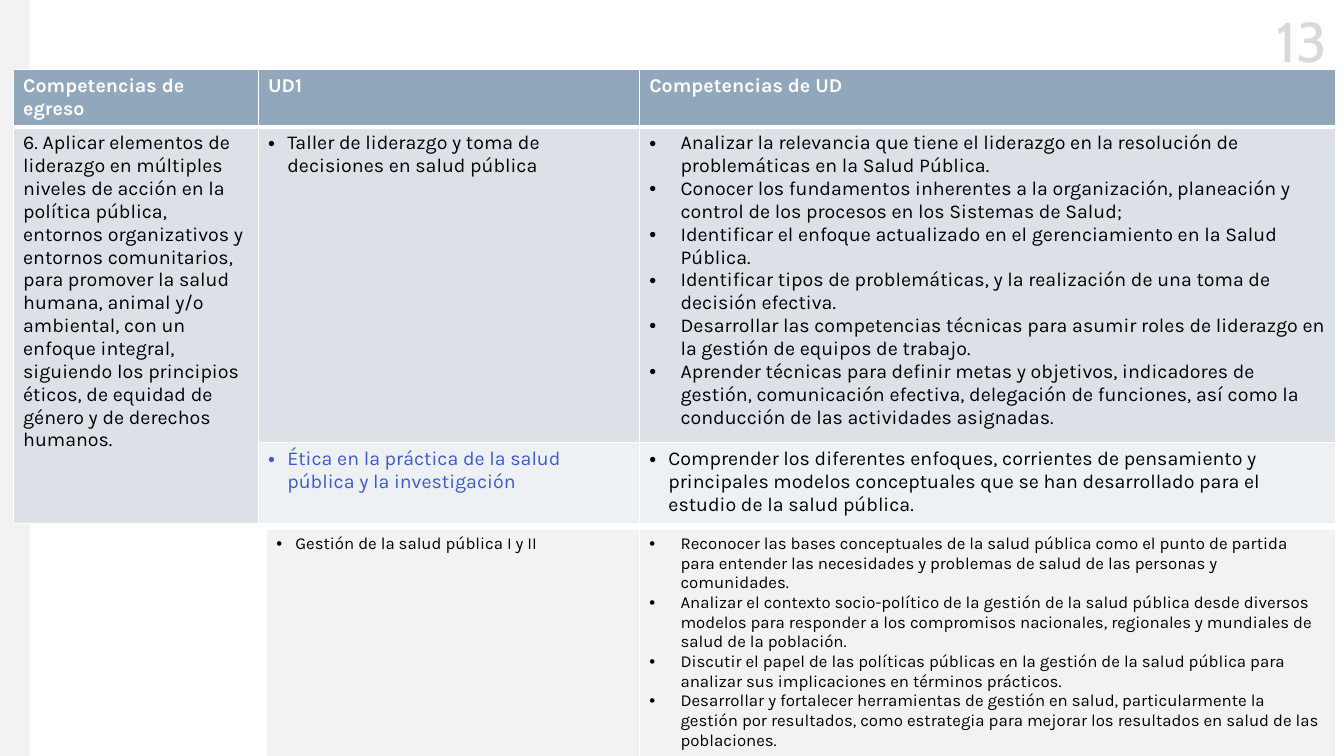
from dataclasses import dataclass

from lxml.etree import SubElement
from pptx import Presentation
from pptx.dml.color import RGBColor as RGB
from pptx.enum.shapes import MSO_SHAPE as SHAPE
from pptx.enum.text import MSO_AUTO_SIZE as AUTO, PP_ALIGN as ALIGN
from pptx.oxml import parse_xml
from pptx.oxml.ns import nsdecls, qn
from pptx.util import Inches, Pt


@dataclass(frozen=True)
class Theme:
    body_font: str = "Karla"
    number_font: str = "Cabin"
    white: str = "FFFFFF"
    black: str = "000000"
    blue: str = "3C5ACF"
    header: str = "91A7BC"
    band_dark: str = "DCE1E7"
    band_light: str = "EEF1F3"
    pale: str = "F2F2F2"
    number: str = "D9D9D9"
    body: int = 14
    small: int = 12
    number_size: int = 40


@dataclass(frozen=True)
class CellText:
    lines: tuple[str, ...]
    fill: str
    color: str = "000000"
    size: int = 14
    bold: bool = False
    indent: float = 0  # inches; zero means no bullet
    bottom: int = 1    # width of the lower border in points


T = Theme()
NARROW, WIDE = 0.19, 0.31
ROW = 0.41
EGRESO, UNIT, SKILLS = 2.43, 3.78, 6.91
LEFT, TOP, HEIGHT = 0.13, 0.69, 4.57
MANAGEMENT_SHIFT = 0.08  # the lower table starts slightly inside the unit column

HEADER = [CellText((name,), T.header, T.white, T.body, True, bottom=3)
          for name in ("Competencias de egreso", "UD1", "Competencias de UD")]

LEADERSHIP = [
    CellText((
        "6. Aplicar elementos de liderazgo en múltiples niveles de acción en la "
        "política pública, entornos organizativos y entornos comunitarios, para "
        "promover la salud humana, animal y/o ambiental, con un enfoque integral, "
        "siguiendo los principios éticos, de equidad de género y de derechos humanos.",
    ), T.band_dark),
    CellText(("Taller de liderazgo y toma de decisiones en salud pública",),
             T.band_dark, indent=NARROW),
    CellText((
        "Analizar la relevancia que tiene el liderazgo en la resolución de "
        "problemáticas en la Salud Pública.",
        "Conocer los fundamentos inherentes a la organización, planeación y control "
        "de los procesos en los Sistemas de Salud;",
        "Identificar el enfoque actualizado en el gerenciamiento en la Salud Pública.",
        "Identificar tipos de problemáticas, y la realización de una toma de "
        "decisión efectiva.",
        "Desarrollar las competencias técnicas para asumir roles de liderazgo en la "
        "gestión de equipos de trabajo.",
        "Aprender técnicas para definir metas y objetivos, indicadores de gestión, "
        "comunicación efectiva, delegación de funciones, así como la conducción de "
        "las actividades asignadas.",
    ), T.band_dark, indent=WIDE),
]

ETHICS = [
    CellText((), T.band_dark),
    CellText(("Ética en la práctica de la salud pública y la investigación",),
             T.band_light, T.blue, indent=NARROW),
    CellText((
        "Comprender los diferentes enfoques, corrientes de pensamiento y principales "
        "modelos conceptuales que se han desarrollado para el estudio de la salud "
        "pública.",
    ), T.band_light, indent=NARROW),
]

MANAGEMENT = [
    CellText(("Gestión de la salud pública I y II",), T.pale, size=T.small,
             indent=NARROW, bottom=3),
    CellText((
        "Reconocer las bases conceptuales de la salud pública como el punto de "
        "partida para entender las necesidades y problemas de salud de las personas "
        "y comunidades.",
        "Analizar el contexto socio-político de la gestión de la salud pública desde "
        "diversos modelos para responder a los compromisos nacionales, regionales y "
        "mundiales de salud de la población.",
        "Discutir el papel de las políticas públicas en la gestión de la salud "
        "pública para analizar sus implicaciones en términos prácticos.",
        "Desarrollar y fortalecer herramientas de gestión en salud, particularmente "
        "la gestión por resultados, como estrategia para mejorar los resultados en "
        "salud de las poblaciones.",
    ), T.pale, size=T.small, indent=WIDE, bottom=3),
]


def add_run(p, text: str, font: str, size: int, color: str, bold: bool = False) -> None:
    r = p.add_run()
    r.text = text
    r.font.name, r.font.size, r.font.bold = font, Pt(size), bold
    r.font.color.rgb = RGB.from_string(color)


def add_bullet(p, indent: float) -> None:
    pPr = p._p.get_or_add_pPr()
    pPr.set("marL", str(Inches(indent)))
    pPr.set("indent", str(-Inches(indent)))
    SubElement(pPr, qn("a:buFont")).set("typeface", "Arial")
    SubElement(pPr, qn("a:buChar")).set("char", "•")


def set_borders(cell, bottom: int) -> None:
    tcPr = cell._tc.get_or_add_tcPr()
    for i, (side, width) in enumerate(zip("LRTB", (1, 1, 1, bottom))):
        tcPr.insert(i, parse_xml(
            f'<a:ln{side} {nsdecls("a")} w="{Pt(width)}"><a:solidFill>'
            f'<a:srgbClr val="{T.white}"/></a:solidFill></a:ln{side}>'))


def fill_cell(cell, content: CellText) -> None:
    cell.fill.solid()
    cell.fill.fore_color.rgb = RGB.from_string(content.fill)
    set_borders(cell, content.bottom)
    tf = cell.text_frame
    for i, line in enumerate(content.lines):
        p = tf.add_paragraph() if i else tf.paragraphs[0]
        if content.indent:
            add_bullet(p, content.indent)
        add_run(p, line, T.body_font, content.size, content.color, content.bold)


def add_grid(s, left: float, top: float, height: float,
             widths: list[float], rows: list[list[CellText]]):
    frame = s.shapes.add_table(len(rows), len(widths), Inches(left), Inches(top),
                               Inches(sum(widths)), Inches(ROW * len(rows)))
    table = frame.table
    table.horz_banding = False
    table.first_row = len(rows) > 1
    for column, width in zip(table.columns, widths):
        column.width = Inches(width)
    for y, row in enumerate(rows):
        for x, content in enumerate(row):
            fill_cell(table.cell(y, x), content)
    frame.height = Inches(height)  # rows grow with their text
    return table


def main() -> None:
    prs = Presentation()
    prs.slide_width, prs.slide_height = Inches(13.33), Inches(7.5)
    s = prs.slides.add_slide(prs.slide_layouts[6])

    # Page number
    box = s.shapes.add_textbox(Inches(12.54), Inches(0.02), Inches(0.75), Inches(0.77))
    tf = box.text_frame
    tf.word_wrap, tf.auto_size = False, AUTO.SHAPE_TO_FIT_TEXT
    p = tf.paragraphs[0]
    p.alignment = ALIGN.CENTER
    add_run(p, "13", T.number_font, T.number_size, T.number)

    # Side band
    sp = s.shapes.add_shape(SHAPE.RECTANGLE, 0, 0, Inches(0.3), prs.slide_height)
    sp.shadow.inherit = False
    sp.fill.solid()
    sp.fill.fore_color.rgb = RGB.from_string(T.pale)
    sp.line.fill.background()

    # Competency table, with the first column joined across both units
    table = add_grid(s, LEFT, TOP, HEIGHT, [EGRESO, UNIT, SKILLS],
                     [HEADER, LEADERSHIP, ETHICS])
    table.cell(1, 0).merge(table.cell(2, 0))

    # Management unit below
    add_grid(s, LEFT + EGRESO + MANAGEMENT_SHIFT, 5.25, 1.9,
             [UNIT - MANAGEMENT_SHIFT, SKILLS], [MANAGEMENT])

    prs.save("out.pptx")


if __name__ == "__main__":
    main()
